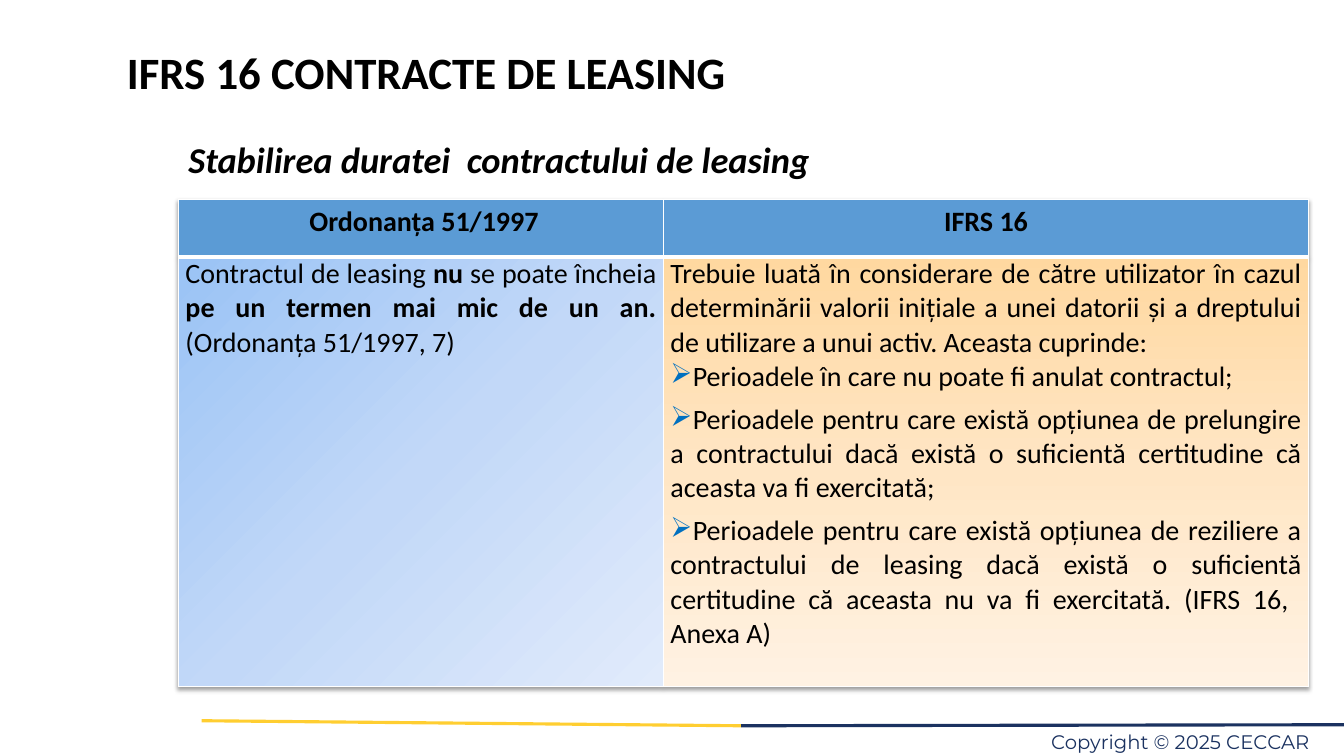
from lxml.etree import SubElement
from pptx import Presentation
from pptx.dml.color import RGBColor
from pptx.enum.shapes import MSO_CONNECTOR
from pptx.enum.text import MSO_ANCHOR, PP_ALIGN as Align
from pptx.oxml import parse_xml
from pptx.oxml.ns import nsdecls, qn
from pptx.util import Inches, Pt

WIDTH, HEIGHT = 13.33, 7.5
TABLE_LEFT, TABLE_TOP = 1.77, 1.98
COLUMNS = (4.81, 6.4)
ROWS = (0.57, 4.26)

BLACK = RGBColor(0x00, 0x00, 0x00)
WHITE = RGBColor(0xFF, 0xFF, 0xFF)
NAVY = RGBColor(0x1B, 0x32, 0x60)
YELLOW = RGBColor(0xFF, 0xCE, 0x31)
HEADER_BLUE = RGBColor(0x5B, 0x9B, 0xD5)
BULLET_BLUE = RGBColor(0x00, 0x70, 0xC0)
BLUES = (RGBColor(0x9A, 0xC3, 0xF5), RGBColor(0xC2, 0xD8, 0xF8), RGBColor(0xE1, 0xEB, 0xFB))
ORANGES = (RGBColor(0xFF, 0xD8, 0xA0), RGBColor(0xFF, 0xE6, 0xC5), RGBColor(0xFF, 0xF2, 0xE3))

HEADERS = (" Ordonanța 51/1997", "IFRS 16")
ORDINANCE = (
    ("Contractul de leasing ", False),
    ("nu", True),
    (" se poate încheia ", False),
    ("pe un termen mai mic de un an. ", True),
    ("(Ordonanța 51/1997, 7)", False),
)
STANDARD = (
    "Trebuie luată în considerare de către utilizator în cazul determinării valorii "
    "inițiale a unei datorii și a dreptului de utilizare a unui activ. Aceasta cuprinde:"
)
PERIODS = (
    "Perioadele în care nu poate fi anulat contractul;",
    "Perioadele pentru care există opțiunea de prelungire a contractului dacă există "
    "o suficientă certitudine că aceasta va fi exercitată;",
    "Perioadele pentru care există opțiunea de reziliere a contractului de leasing dacă "
    "există o suficientă certitudine că aceasta nu va fi exercitată. (IFRS 16,  Anexa A)",
)


def style(span, size, color=BLACK, name="Calibri", bold=False, italic=False):
    font = span.font
    font.size, font.name, font.bold, font.italic = Pt(size), name, bold, italic
    font.color.rgb = color


def add_text(page, place, text, align, spacing, margin=None, **look):
    box = page.shapes.add_textbox(*map(Inches, place))
    frame = box.text_frame
    frame.word_wrap = True
    if margin is not None:
        frame.margin_left = frame.margin_right = margin
        frame.margin_top = frame.margin_bottom = margin
    frame.text = text
    para = frame.paragraphs[0]
    para.alignment, para.line_spacing = align, spacing
    style(para.runs[0], **look)


def add_rule(page, start, end, color):
    rule = page.shapes.add_connector(MSO_CONNECTOR.STRAIGHT, *map(Inches, start + end))
    rule.line.color.rgb, rule.line.width = color, Pt(2.25)
    SubElement(rule._element.spPr, qn("a:effectLst"))


def set_borders(cell, bottom):
    properties = cell._tc.get_or_add_tcPr()
    for side, points in (("L", 1), ("R", 1), ("T", 1), ("B", bottom)):
        properties.append(parse_xml(
            f'<a:ln{side} {nsdecls("a")} w="{Pt(points)}"><a:solidFill>'
            f'<a:srgbClr val="{WHITE}"/></a:solidFill></a:ln{side}>'))


def set_gradient(cell, colors, angle):
    stops = "".join(
        f'<a:gs pos="{index * 50000}"><a:srgbClr val="{color}"/></a:gs>'
        for index, color in enumerate(colors))
    cell._tc.get_or_add_tcPr().append(parse_xml(
        f'<a:gradFill {nsdecls("a")} rotWithShape="1"><a:gsLst>{stops}</a:gsLst>'
        f'<a:lin ang="{angle * 60000}" scaled="0"/></a:gradFill>'))


def add_bullet(para):
    properties = para._p.get_or_add_pPr()
    color = SubElement(properties, qn("a:buClr"))
    SubElement(color, qn("a:srgbClr"), val=str(BULLET_BLUE))
    SubElement(properties, qn("a:buChar"), char="➢")


def add_shadow(table):
    table._tbl.tblPr.insert(0, parse_xml(
        f'<a:effectLst {nsdecls("a")}><a:outerShdw blurRad="40000" dist="20000" '
        'dir="5400000" rotWithShape="0"><a:srgbClr val="000000"><a:alpha val="38000"/>'
        '</a:srgbClr></a:outerShdw></a:effectLst>'))


def fill_header(cell, text):
    set_borders(cell, bottom=3)
    cell.fill.solid()
    cell.fill.fore_color.rgb = HEADER_BLUE
    cell.text = text
    para = cell.text_frame.paragraphs[0]
    para.alignment = Align.CENTER
    style(para.runs[0], 20, bold=True)


def fill_body(cell, paragraphs, colors, angle):
    """Each paragraph is a list of (text, bold) spans; those after the first are bulleted."""
    set_borders(cell, bottom=1)
    set_gradient(cell, colors, angle)
    cell.margin_left = cell.margin_right = Inches(0.07)
    cell.margin_top = cell.margin_bottom = 0
    cell.vertical_anchor = MSO_ANCHOR.TOP
    frame = cell.text_frame
    for index, spans in enumerate(paragraphs):
        para = frame.add_paragraph() if index else frame.paragraphs[0]
        para.alignment = Align.JUSTIFY
        if index:
            para.space_after = Pt(6)
            add_bullet(para)
        for text, bold in spans:
            span = para.add_run()
            span.text = text
            style(span, 20, bold=bold)


def add_comparison(page):
    place = (TABLE_LEFT, TABLE_TOP, sum(COLUMNS), sum(ROWS))
    table = page.shapes.add_table(len(ROWS), len(COLUMNS), *map(Inches, place)).table
    table.horz_banding = False
    for column, width in zip(table.columns, COLUMNS):
        column.width = Inches(width)
    for row, height in zip(table.rows, ROWS):
        row.height = Inches(height)
    for index, text in enumerate(HEADERS):
        fill_header(table.cell(0, index), text)
    fill_body(table.cell(1, 0), [ORDINANCE], BLUES, 45)
    standard = [[(text, False)] for text in (STANDARD, *PERIODS)]
    fill_body(table.cell(1, 1), standard, ORANGES, 90)
    add_shadow(table)


def main():
    deck = Presentation()
    deck.slide_width, deck.slide_height = Inches(WIDTH), Inches(HEIGHT)
    page = deck.slides.add_slide(deck.slide_layouts[6])
    joint = (7.35, 7.2)
    add_rule(page, (2, 7.15), joint, YELLOW)
    add_rule(page, joint, (WIDTH, 7.19), NAVY)
    add_text(page, (9.11, 7.19, 3.93, 0.27), "Copyright © 2025 CECCAR ", Align.RIGHT,
             Pt(20.5), margin=0, size=14, name="Montserrat", color=NAVY)
    add_text(page, (TABLE_LEFT, 1.09, 8.75, 4.94),
             "Stabilirea duratei  contractului de leasing ", Align.JUSTIFY, 1.5,
             size=26, bold=True, italic=True)
    add_text(page, (0, 0.45, 8.46, 0.89), "IFRS 16 CONTRACTE DE LEASING", Align.CENTER,
             0.9, size=32, bold=True)
    add_comparison(page)
    deck.save("out.pptx")


if __name__ == "__main__":
    main()
